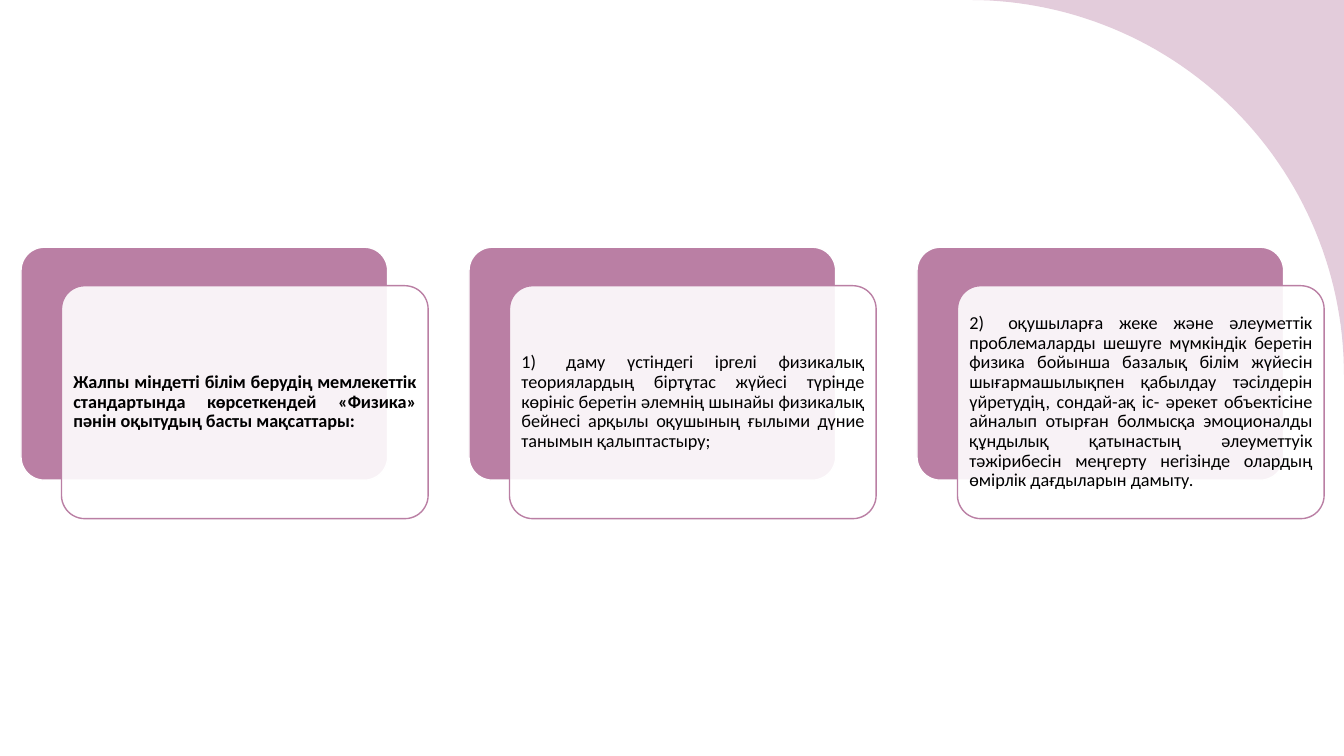
import dataclasses
import math

import lxml.etree
import pptx
import pptx.dml.color
import pptx.enum.shapes
import pptx.enum.text
import pptx.oxml.ns
import pptx.shapes.autoshape
import pptx.slide
import pptx.util

Cm = pptx.util.Cm
Pt = pptx.util.Pt
RGBColor = pptx.dml.color.RGBColor
qn = pptx.oxml.ns.qn

WHITE = RGBColor(0xFF, 0xFF, 0xFF)
BLACK = RGBColor(0x00, 0x00, 0x00)
MAUVE = RGBColor(0xBA, 0x7F, 0xA4)
PALE_MAUVE = RGBColor(0xE3, 0xCC, 0xDB)

SLIDE_WIDTH, SLIDE_HEIGHT = 33.87, 19.05
CORNER_SIZE = 9.44
CORNER_STEPS = 60
CARD_LEFT, CARD_TOP = 0.53, 6.23
CARD_WIDTH, CARD_HEIGHT = 9.24, 5.87
CARD_PITCH = 11.29
FRONT_SHIFT_X, FRONT_SHIFT_Y = 1.02, 0.97
TEXT_MARGIN = 0.13


@dataclasses.dataclass(frozen=True)
class Card:
    text: str
    bold: bool = False
    tab_stop: float = 0


CARDS = (
    Card(
        "Жалпы міндетті білім берудің мемлекеттік стандартында көрсеткендей "
        "«Физика» пәнін оқытудың басты мақсаттары:",
        bold=True,
    ),
    Card(
        "1)\tдаму үстіндегі іргелі физикалық теориялардың біртұтас жүйесі "
        "түрінде көрініс беретін әлемнің шынайы физикалық бейнесі арқылы "
        "оқушының ғылыми дүние танымын қалыптастыру;",
        tab_stop=1.13,
    ),
    Card(
        "2)\tоқушыларға жеке және әлеуметтік проблемаларды шешуге мүмкіндік "
        "беретін физика бойынша базалық білім жүйесін шығармашылықпен қабылдау "
        "тәсілдерін үйретудің, сондай-ақ іс- әрекет объектісіне айналып отырған "
        "болмысқа эмоционалды құндылық қатынастың әлеуметтуік тәжірибесін "
        "меңгерту негізінде олардың өмірлік дағдыларын дамыту.",
        tab_stop=0.98,
    ),
)


def add_corner(slide: pptx.slide.Slide) -> None:
    left = SLIDE_WIDTH - CORNER_SIZE
    angles = [math.pi / 2 * step / CORNER_STEPS for step in range(CORNER_STEPS + 1)]
    arc = [
        (
            Cm(left + CORNER_SIZE * math.sin(angle)),
            Cm(CORNER_SIZE * (1 - math.cos(angle))),
        )
        for angle in angles
    ]
    builder = slide.shapes.build_freeform(*arc[0])
    builder.add_line_segments(arc[1:] + [(Cm(SLIDE_WIDTH), Cm(0))], close=True)
    corner = builder.convert_to_shape()
    corner.shadow.inherit = False
    corner.fill.solid()
    corner.fill.fore_color.rgb = PALE_MAUVE
    corner.line.fill.background()


def add_panel(
    slide: pptx.slide.Slide, left: float, top: float, fill: RGBColor, line: RGBColor
) -> pptx.shapes.autoshape.Shape:
    panel = slide.shapes.add_shape(
        pptx.enum.shapes.MSO_SHAPE.ROUNDED_RECTANGLE,
        Cm(left), Cm(top), Cm(CARD_WIDTH), Cm(CARD_HEIGHT),
    )
    panel.adjustments[0] = 0.1
    panel.shadow.inherit = False
    panel.fill.solid()
    panel.fill.fore_color.rgb = fill
    panel.line.color.rgb = line
    panel.line.width = Pt(1)
    return panel


def set_opacity(panel: pptx.shapes.autoshape.Shape, percent: int) -> None:
    color = panel._element.spPr.find(qn("a:solidFill")).find(qn("a:srgbClr"))
    lxml.etree.SubElement(color, qn("a:alpha"), val=str(percent * 1000))


def write_text(panel: pptx.shapes.autoshape.Shape, card: Card) -> None:
    frame = panel.text_frame
    frame.word_wrap = True
    frame.vertical_anchor = pptx.enum.text.MSO_ANCHOR.MIDDLE
    frame.margin_left = frame.margin_right = Cm(TEXT_MARGIN)
    frame.margin_top = frame.margin_bottom = Cm(TEXT_MARGIN)
    para = frame.paragraphs[0]
    para.alignment = pptx.enum.text.PP_ALIGN.JUSTIFY
    para.line_spacing = 0.9
    if card.tab_stop:
        tabs = lxml.etree.SubElement(para._p.get_or_add_pPr(), qn("a:tabLst"))
        lxml.etree.SubElement(tabs, qn("a:tab"), pos=str(Cm(card.tab_stop)), algn="l")
    span = para.add_run()
    span.text = card.text
    span.font.name = "Calibri"
    span.font.size = Pt(13)
    span.font.bold = card.bold
    span.font.color.rgb = BLACK


def add_card(slide: pptx.slide.Slide, card: Card, left: float) -> None:
    add_panel(slide, left, CARD_TOP, MAUVE, WHITE)
    front = add_panel(
        slide, left + FRONT_SHIFT_X, CARD_TOP + FRONT_SHIFT_Y, WHITE, MAUVE
    )
    set_opacity(front, 90)
    write_text(front, card)


def main() -> None:
    deck = pptx.Presentation()
    deck.slide_width = Cm(SLIDE_WIDTH)
    deck.slide_height = Cm(SLIDE_HEIGHT)
    page = deck.slides.add_slide(deck.slide_layouts[6])
    page.background.fill.solid()
    page.background.fill.fore_color.rgb = WHITE
    add_corner(page)
    for index, card in enumerate(CARDS):
        add_card(page, card, CARD_LEFT + index * CARD_PITCH)
    deck.save("out.pptx")


if __name__ == "__main__":
    main()
